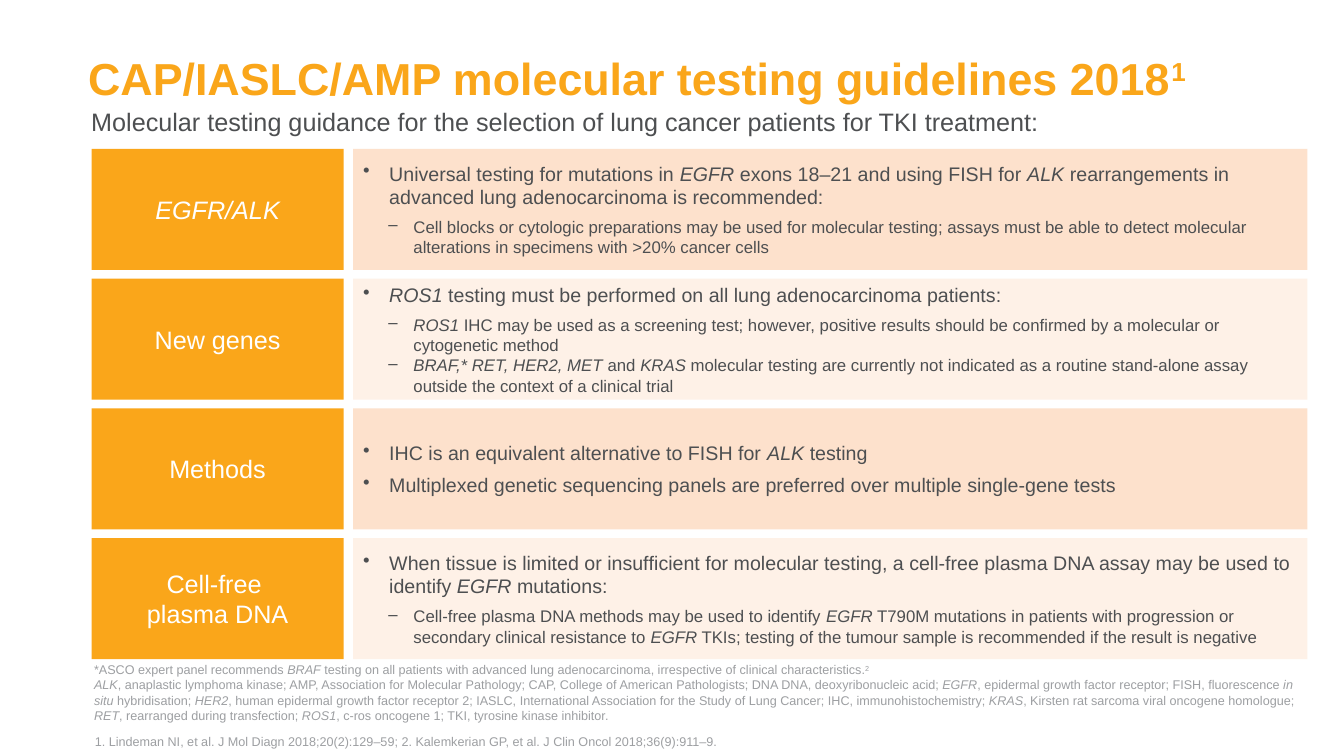
import pptx
import pptx.util
import pptx.dml.color
import pptx.enum.shapes
import pptx.enum.text
import pptx.oxml.ns
import lxml.etree

Cm = pptx.util.Cm
Pt = pptx.util.Pt
ALIGN = pptx.enum.text.PP_ALIGN
ANCHOR = pptx.enum.text.MSO_ANCHOR

COLOURS = {
    "orange": "FAA61A",
    "peach": "FDE1CC",
    "cream": "FEF1E7",
    "ink": "4D4F51",
    "grey": "9D9FA2",
    "white": "FFFFFF",
}
LEVELS = {
    1: {"size": 14, "bullet": "•", "margin": 0.66, "hang": 0.66},
    2: {"size": 12, "bullet": "–", "margin": 1.27, "hang": 0.63},
}
TOPICS = [
    ("_EGFR/ALK_", [
        (1, 6, "Universal testing for mutations in _EGFR_ exons 18–21 and using FISH for _ALK_ "
               "rearrangements in advanced lung adenocarcinoma is recommended:"),
        (2, 6, "Cell blocks or cytologic preparations may be used for molecular testing; assays must "
               "be able to detect molecular alterations in specimens with >20% cancer cells"),
    ]),
    ("New genes", [
        (1, 6, "_ROS1_ testing must be performed on all lung adenocarcinoma patients:"),
        (2, 0, "_ROS1_ IHC may be used as a screening test; however, positive results should be "
               "conﬁrmed by a molecular or cytogenetic method"),
        (2, 0, "_BRAF,* RET, HER2, MET _and _KRAS _molecular testing are currently not indicated as "
               "a routine stand-alone assay outside the context of a clinical trial"),
    ]),
    ("Methods", [
        (1, 6, "IHC is an equivalent alternative to FISH for _ALK_ testing"),
        (1, 0, "Multiplexed genetic sequencing panels are preferred over multiple single-gene tests"),
    ]),
    ("Cell-free \nplasma DNA", [
        (1, 6, "When tissue is limited or insufﬁcient for molecular testing, a cell-free plasma DNA "
               "assay may be used to identify _EGFR _mutations:"),
        (2, 0, "Cell-free plasma DNA methods may be used to identify _EGFR_ T790M mutations in "
               "patients with progression or secondary clinical resistance to _EGFR_ TKIs; testing "
               "of the tumour sample is recommended if the result is negative"),
    ]),
]
FOOTNOTES = [
    "*ASCO expert panel recommends _BRAF_ testing on all patients with advanced lung "
    "adenocarcinoma, irrespective of clinical characteristics.^2",
    "_ALK_, anaplastic lymphoma kinase; AMP, Association for Molecular Pathology; CAP, College of "
    "American Pathologists; DNA DNA, deoxyribonucleic acid; _EGFR_, epidermal growth factor "
    "receptor; FISH, fluorescence _in situ _hybridisation; _HER2_, human epidermal growth factor "
    "receptor 2; IASLC, International Association for the Study of Lung Cancer; IHC, "
    "immunohistochemistry; _KRAS_, Kirsten rat sarcoma viral oncogene homologue; _RET_, rearranged "
    "during transfection; _ROS1_, c-ros oncogene 1; TKI, tyrosine kinase inhibitor.",
]
REFERENCES = ("1. Lindeman NI, et al. J Mol Diagn 2018;20(2):129–59; "
              "2. Kalemkerian GP, et al. J Clin Oncol 2018;36(9):911–9.")


class SlideBuilder:
    font = "Arial"

    def __init__(self, page):
        self.page = page

    def colour(self, name):
        return pptx.dml.color.RGBColor.from_string(COLOURS[name])

    def span(self, para, text, size, colour, bold=False, italic=False, raised=False):
        span = para.add_run()
        span.text = text
        span.font.name = self.font
        span.font.size = Pt(size)
        span.font.bold = bold
        span.font.italic = italic
        span.font.color.rgb = self.colour(colour)
        if raised:
            span._r.get_or_add_rPr().set("baseline", "30000")

    def spans(self, para, text, size, colour, bold=False):
        for row, line in enumerate(text.split("\n")):
            if row:
                para.add_line_break()
            main_text, _, raised = line.partition("^")
            for index, piece in enumerate(main_text.split("_")):
                if piece:
                    self.span(para, piece, size, colour, bold, italic=index % 2 == 1)
            if raised:
                self.span(para, raised, size, colour, bold, raised=True)

    def paragraphs(self, frame, count):
        return [frame.paragraphs[0]] + [frame.add_paragraph() for _ in range(count - 1)]

    def bullet(self, para, level):
        properties = para._p.get_or_add_pPr()
        properties.set("marL", str(Cm(level["margin"])))
        properties.set("indent", str(-Cm(level["hang"])))
        mark = lxml.etree.SubElement(properties, pptx.oxml.ns.qn("a:buChar"))
        mark.set("char", level["bullet"])

    def title(self, text, left, top, width, height):
        box = self.page.shapes.title
        box.left, box.top, box.width, box.height = Cm(left), Cm(top), Cm(width), Cm(height)
        frame = box.text_frame
        frame.margin_left = frame.margin_right = frame.margin_top = frame.margin_bottom = 0
        frame.vertical_anchor = ANCHOR.MIDDLE
        frame.auto_size = pptx.enum.text.MSO_AUTO_SIZE.NONE
        para = frame.paragraphs[0]
        para.alignment = ALIGN.LEFT
        para.line_spacing = 0.75
        self.spans(para, text, 32, "orange", bold=True)

    def text(self, lines, left, top, width, height, size, colour, anchor=ANCHOR.TOP):
        box = self.page.shapes.add_textbox(Cm(left), Cm(top), Cm(width), Cm(height))
        frame = box.text_frame
        frame.word_wrap = True
        frame.vertical_anchor = anchor
        for para, line in zip(self.paragraphs(frame, len(lines)), lines):
            self.spans(para, line, size, colour)

    def panel(self, left, top, width, height, fill):
        box = self.page.shapes.add_shape(
            pptx.enum.shapes.MSO_SHAPE.RECTANGLE, Cm(left), Cm(top), Cm(width), Cm(height))
        box.shadow.inherit = False
        box.fill.solid()
        box.fill.fore_color.rgb = self.colour(fill)
        box.line.fill.background()
        frame = box.text_frame
        frame.word_wrap = True
        frame.vertical_anchor = ANCHOR.MIDDLE
        return frame

    def label(self, text, left, top, width, height):
        para = self.panel(left, top, width, height, "orange").paragraphs[0]
        para.alignment = ALIGN.CENTER
        self.spans(para, text, 18, "white")

    def points(self, points, left, top, width, height, fill):
        frame = self.panel(left, top, width, height, fill)
        for para, (depth, after, text) in zip(self.paragraphs(frame, len(points)), points):
            para.alignment = ALIGN.LEFT
            para.space_after = Pt(after)
            self.bullet(para, LEVELS[depth])
            self.spans(para, text, LEVELS[depth]["size"], "ink")


def main():
    deck = pptx.Presentation()
    deck.slide_width, deck.slide_height = Cm(33.87), Cm(19.05)
    builder = SlideBuilder(deck.slides.add_slide(deck.slide_layouts[5]))

    builder.title("CAP/IASLC/AMP molecular testing guidelines 2018^1", 2.22, 1.02, 30.4, 2.16)
    builder.text(["Molecular testing guidance for the selection of lung cancer patients for TKI treatment:"],
                 2.05, 2.55, 29.72, 1.03, 18, "ink")

    first_top, pitch, height = 3.75, 3.27, 3.05
    for index, (name, points) in enumerate(TOPICS):
        top = first_top + index * pitch
        builder.label(name, 2.31, top, 6.35, height)
        builder.points(points, 8.9, top, 24.05, height, ("peach", "cream")[index % 2])

    builder.text(FOOTNOTES, 2.12, 17.3, 31.04, 1.04, 9, "grey", ANCHOR.BOTTOM)
    builder.text([REFERENCES], 2.14, 18.37, 29.6, 0.76, 9, "grey")
    deck.save("out.pptx")


if __name__ == "__main__":
    main()
